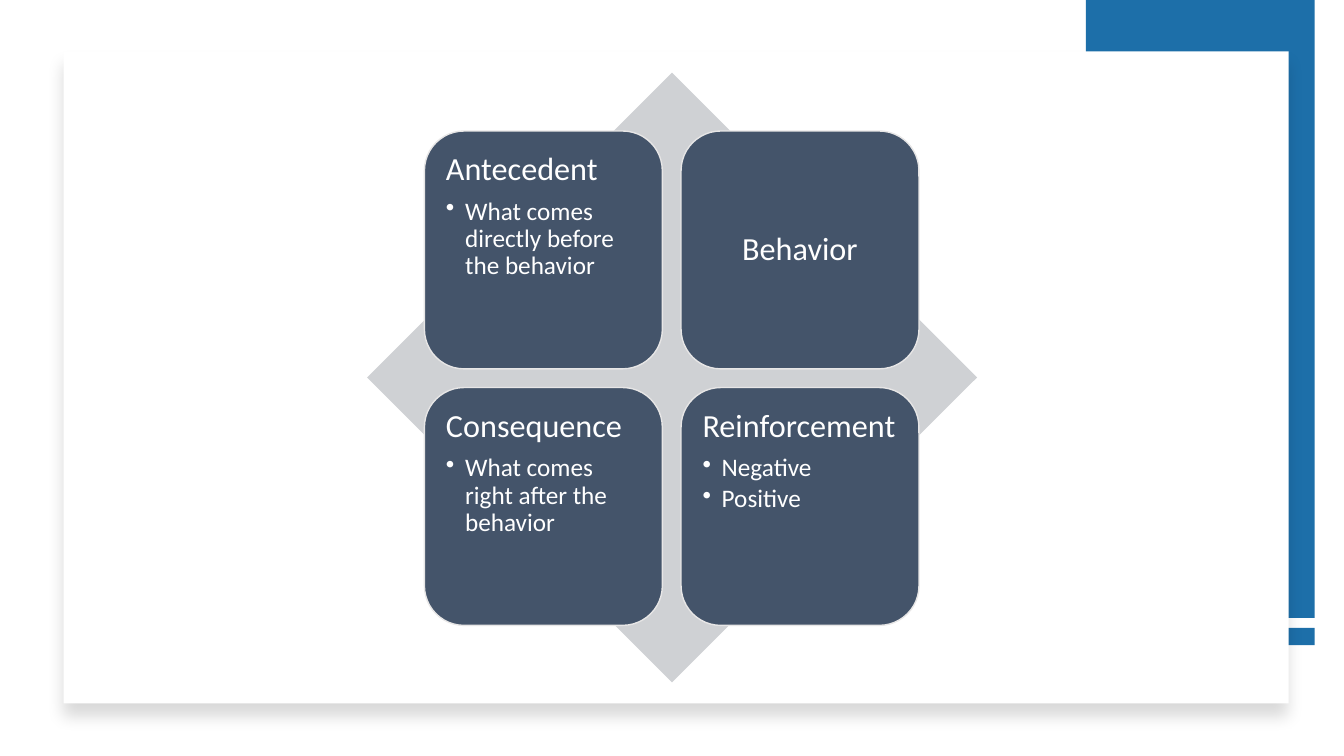
from dataclasses import dataclass

from lxml import etree
from pptx import Presentation
from pptx.dml.color import RGBColor
from pptx.enum.shapes import MSO_SHAPE
from pptx.enum.text import MSO_ANCHOR, PP_ALIGN
from pptx.oxml.ns import qn
from pptx.util import Inches, Pt

RECTANGLE = MSO_SHAPE.RECTANGLE
DIAMOND = MSO_SHAPE.DIAMOND
ROUNDED = MSO_SHAPE.ROUNDED_RECTANGLE
TOP, MIDDLE = MSO_ANCHOR.TOP, MSO_ANCHOR.MIDDLE
LEFT, CENTER = PP_ALIGN.LEFT, PP_ALIGN.CENTER

COLORS = {
    "accent": "1D6FA9",
    "panel": "FFFFFF",
    "diamond": "CFD1D4",
    "tile": "44546A",
    "tile_line": "E7E6E6",
    "text": "FFFFFF",
    "shadow": "000000",
}
FONT = "Calibri"

GRID_LEFT, GRID_TOP = 4.21, 1.3
TILE_SIZE, TILE_STEP = 2.36, 2.545
TEXT_OFFSET, TEXT_SIZE = 0.115, 2.13
BULLET_INDENT = 0.19


@dataclass
class Block:
    kind: MSO_SHAPE
    left: float
    top: float
    width: float
    height: float
    color: str


@dataclass
class Tile:
    title: str
    bullets: tuple[str, ...] = ()


BARS = [
    Block(RECTANGLE, 10.77, 6.23, 2.27, 0.17, "accent"),
    Block(RECTANGLE, 10.77, 0, 2.27, 6.13, "accent"),
]
PANEL = Block(RECTANGLE, 0.63, 0.51, 12.15, 6.47, "panel")
BACK_DIAMOND = Block(DIAMOND, 3.64, 0.72, 6.05, 6.05, "diamond")
TILES = [
    Tile("Antecedent", ("What comes directly before the behavior",)),
    Tile("Behavior"),
    Tile("Consequence", ("What comes right after the behavior",)),
    Tile("Reinforcement", ("Negative", "Positive")),
]


def add_block(page, block: Block):
    shape = page.shapes.add_shape(
        block.kind, Inches(block.left), Inches(block.top),
        Inches(block.width), Inches(block.height))
    shape.shadow.inherit = False
    shape.fill.solid()
    shape.fill.fore_color.rgb = RGBColor.from_string(COLORS[block.color])
    shape.line.fill.background()
    return shape


def add_drop_shadow(shape) -> None:
    effects = shape._element.spPr.find(qn("a:effectLst"))
    shadow = etree.SubElement(
        effects, qn("a:outerShdw"), blurRad=str(Pt(11)), dist=str(Pt(10)),
        dir="5400000", algn="t", rotWithShape="0")
    color = etree.SubElement(shadow, qn("a:srgbClr"), val=COLORS["shadow"])
    etree.SubElement(color, qn("a:alpha"), val="15000")


def write_text(para, text: str, *, size: float, space_after: float,
               align: PP_ALIGN = LEFT, bullet: bool = False) -> None:
    para.alignment = align
    para.line_spacing = 0.9
    para.space_after = Pt(space_after)
    if bullet:
        para.level = 1
        properties = para._p.get_or_add_pPr()
        properties.set("marL", str(Inches(BULLET_INDENT)))
        properties.set("indent", str(-Inches(BULLET_INDENT)))
        etree.SubElement(properties, qn("a:buChar"), char="•")
    span = para.add_run()
    span.text = text
    span.font.name = FONT
    span.font.size = Pt(size)
    span.font.color.rgb = RGBColor.from_string(COLORS["text"])


def add_tile(page, tile: Tile, left: float, top: float) -> None:
    shape = add_block(page, Block(ROUNDED, left, top, TILE_SIZE, TILE_SIZE, "tile"))
    shape.line.color.rgb = RGBColor.from_string(COLORS["tile_line"])
    shape.line.width = Pt(1)

    box = page.shapes.add_textbox(
        Inches(left + TEXT_OFFSET), Inches(top + TEXT_OFFSET),
        Inches(TEXT_SIZE), Inches(TEXT_SIZE))
    frame = box.text_frame
    frame.word_wrap = True
    frame.margin_left = frame.margin_right = Inches(0.1)
    frame.margin_top = frame.margin_bottom = Inches(0.1)
    frame.vertical_anchor = TOP if tile.bullets else MIDDLE
    write_text(frame.paragraphs[0], tile.title, size=23, space_after=8,
               align=LEFT if tile.bullets else CENTER)
    for bullet in tile.bullets:
        write_text(frame.add_paragraph(), bullet, size=18, space_after=2.7,
                   bullet=True)


def main() -> None:
    deck = Presentation()
    deck.slide_width, deck.slide_height = Inches(13.33), Inches(7.5)
    page = deck.slides.add_slide(deck.slide_layouts[6])
    for bar in BARS:
        add_block(page, bar)
    add_drop_shadow(add_block(page, PANEL))
    add_block(page, BACK_DIAMOND)
    for index, tile in enumerate(TILES):
        row, column = divmod(index, 2)
        add_tile(page, tile, GRID_LEFT + column * TILE_STEP,
                 GRID_TOP + row * TILE_STEP)
    deck.save("out.pptx")


if __name__ == "__main__":
    main()
